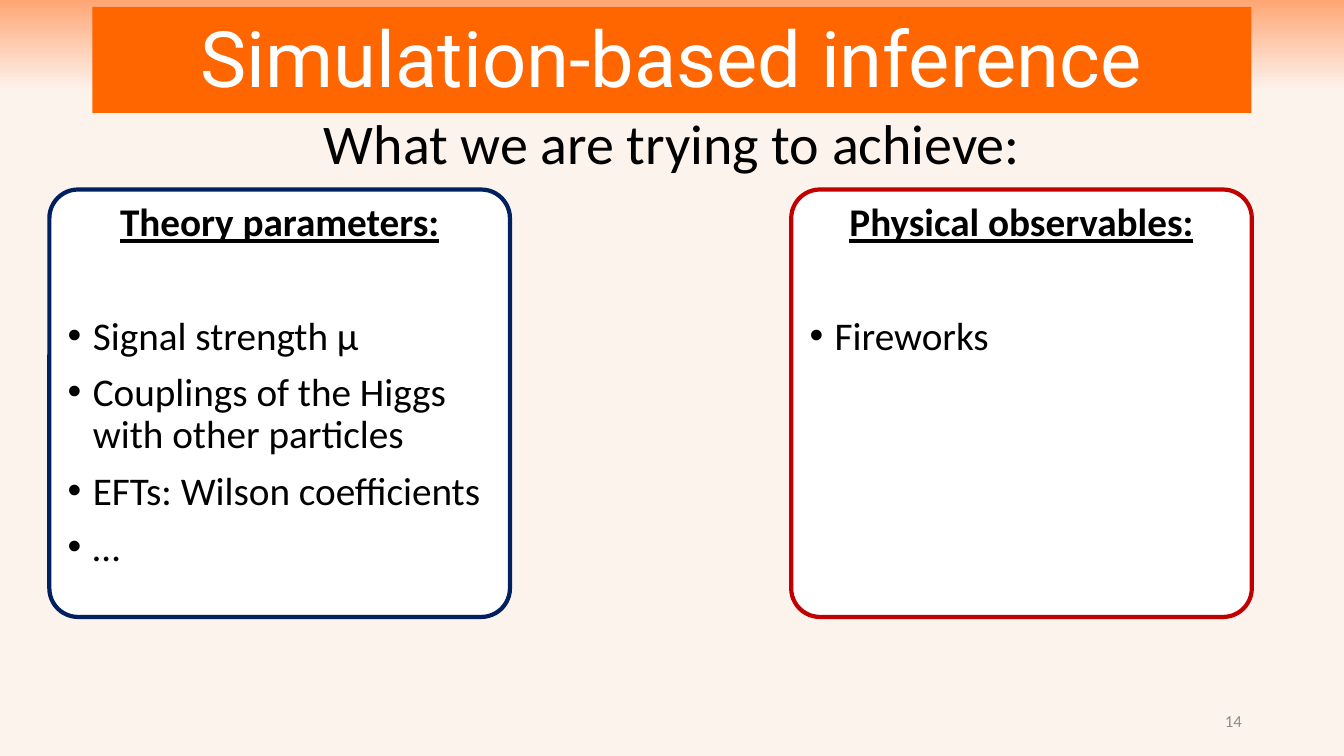
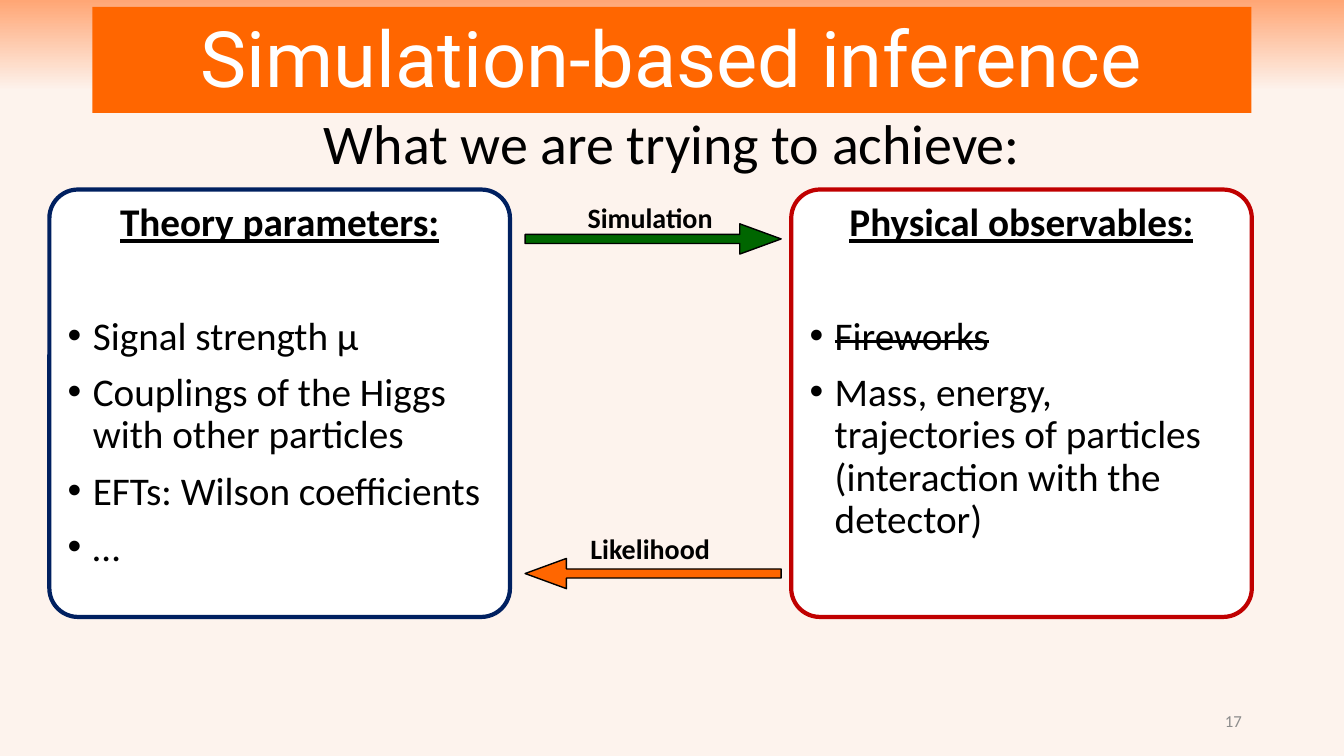
from copy import deepcopy
from dataclasses import dataclass

from lxml import etree
from pptx import Presentation
from pptx.dml.color import RGBColor
from pptx.enum.shapes import MSO_SHAPE
from pptx.enum.text import MSO_ANCHOR, MSO_AUTO_SIZE, PP_ALIGN
from pptx.oxml.ns import qn
from pptx.util import Pt

RECT, ROUND = MSO_SHAPE.RECTANGLE, MSO_SHAPE.ROUNDED_RECTANGLE
RIGHT, LEFT = MSO_SHAPE.RIGHT_ARROW, MSO_SHAPE.LEFT_ARROW
TOP, MIDDLE = MSO_ANCHOR.TOP, MSO_ANCHOR.MIDDLE
START, CENTER, END = PP_ALIGN.LEFT, PP_ALIGN.CENTER, PP_ALIGN.RIGHT
FIXED = MSO_AUTO_SIZE.NONE


@dataclass(frozen=True)
class Theme:
    # Colours
    glow: str = "FFA675"
    paper: str = "FDF3ED"
    orange: str = "FF6600"
    green: str = "006600"
    navy: str = "002060"
    red: str = "C00000"
    white: str = "FFFFFF"
    black: str = "000000"
    gray: str = "8C8C8C"
    # Fonts and type sizes
    body: str = "Calibri"
    head: str = "Roboto"
    banner: float = 55.5
    title: float = 40
    text: float = 28
    label: float = 20
    note: float = 12


T = Theme()
WIDTH, HEIGHT = 960, 540

# Boxes: left, top, width, height in points
BANNER = (66, 5, 828, 75.6)
TITLE = (0, 52.6, WIDTH, 104.4)
THEORY = (35.3, 135.4, 329, 305.3)
DATA = (565.2, *THEORY[1:])
NUMBER = (678.2, 500.4, 216, 28.8)
FORWARD = (375.1, 139.7, 182.9, 41.8)
BACK = (375.1, 375.8, 182.9, 44.7)

PARAMS = ["Signal strength μ", "Couplings of the Higgs with other particles",
          "EFTs: Wilson coefficients", "…"]
TRACES = "Mass, energy, trajectories of particles (interaction with the detector)"


def rgb(code):
    return RGBColor.from_string(code)


def assign(item, values):
    for name, value in values.items():
        setattr(item, name, value)


def write(para, text, size, color=T.black, font=T.body, align=CENTER,
          line=None, before=0, **extra):
    assign(para, {"alignment": align, "line_spacing": line,
                  "space_before": Pt(before)})
    run = para.add_run()
    run.text = text
    assign(run.font, {"name": font, "size": Pt(size), "bold": False, **extra})
    run.font.color.rgb = rgb(color)
    return run


def setup(frame, anchor=TOP, **extra):
    assign(frame, {"word_wrap": True, "auto_size": FIXED,
                   "vertical_anchor": anchor, **extra})
    return frame.paragraphs[0]


def draw(slide, kind, box, fill, line=None, width=1):
    shape = slide.shapes.add_shape(kind, *map(Pt, box))
    shape.shadow.inherit = False
    shape.fill.solid()
    shape.fill.fore_color.rgb = rgb(fill)
    if line:
        shape.line.color.rgb = rgb(line)
        shape.line.width = Pt(width)
    else:
        shape.line.fill.background()
    return shape


def textbox(slide, box, text, size, anchor=TOP, **extra):
    frame = slide.shapes.add_textbox(*map(Pt, box)).text_frame
    write(setup(frame, anchor), text, size, **extra)


def bullet(para):
    props = para._p.get_or_add_pPr()
    props.set("marL", str(Pt(18)))
    props.set("indent", str(Pt(-18)))
    etree.SubElement(props, qn("a:buFont")).set("typeface", "Arial")
    etree.SubElement(props, qn("a:buChar")).set("char", "•")


def backdrop(master):
    """Fade from a warm top edge to a plain page."""
    fill = master.background.fill
    fill.gradient()
    fill.gradient_angle = 270
    for stop, color, place in zip(fill.gradient_stops, (T.glow, T.paper), (0, 0.12)):
        stop.color.rgb = rgb(color)
        stop.position = place
    stops = master.element.find(".//" + qn("a:gsLst"))
    last = deepcopy(stops[-1])
    last.set("pos", "100000")
    stops.append(last)


def heading(slide, box, text):
    title = slide.shapes.title
    assign(title, dict(zip(("left", "top", "width", "height"), map(Pt, box))))
    write(setup(title.text_frame, MIDDLE), text, T.title, line=0.9)


def banner(slide, box, text):
    shape = draw(slide, RECT, box, T.orange)
    para = setup(shape.text_frame, MIDDLE, margin_top=Pt(11.5))
    write(para, text, T.banner, T.white, T.head, line=0.8)


def panel(slide, box, color, head, items, struck=()):
    shape = draw(slide, ROUND, box, T.white, color, 3)
    shape.adjustments[0] = 0.067
    frame = shape.text_frame
    write(setup(frame), head, T.text, line=0.9, before=10,
          bold=True, underline=True)
    for index, item in enumerate(items):
        para = frame.add_paragraph()
        # The first bullet stands one line further from the heading
        run = write(para, item, T.text, align=START, line=0.9,
                    before=10 if index else 50.7)
        bullet(para)
        if item in struck:
            run.font._element.set("strike", "sngStrike")


def step(slide, box, kind, color, text):
    """Arrow on the floor of the box, its label on the ceiling."""
    left, top, width, height = box
    thick = 21.6
    arrow = draw(slide, kind, (left, top + height - thick, width, thick),
                 color, T.black)
    arrow.adjustments[0], arrow.adjustments[1] = 0.3, 1.367
    textbox(slide, (left + 27.4, top, 123.8, 31.7), text, T.label, bold=True)


def page(deck, number, seen, struck=(), steps=()):
    slide = deck.slides.add_slide(deck.slide_layouts[5])
    heading(slide, TITLE, "What we are trying to achieve:")
    panel(slide, THEORY, T.navy, "Theory parameters:", PARAMS)
    panel(slide, DATA, T.red, "Physical observables:", seen, struck)
    for item in steps:
        step(slide, *item)
    textbox(slide, NUMBER, number, T.note, MIDDLE, color=T.gray, align=END)
    banner(slide, BANNER, "Simulation-based inference")


def main():
    deck = Presentation()
    deck.slide_width, deck.slide_height = Pt(WIDTH), Pt(HEIGHT)
    backdrop(deck.slide_master)
    page(deck, "14", ["Fireworks"])
    page(deck, "17", ["Fireworks", TRACES], struck=["Fireworks"],
         steps=[(FORWARD, RIGHT, T.green, "Simulation"),
                (BACK, LEFT, T.orange, "Likelihood")])
    deck.save("out.pptx")


if __name__ == "__main__":
    main()
